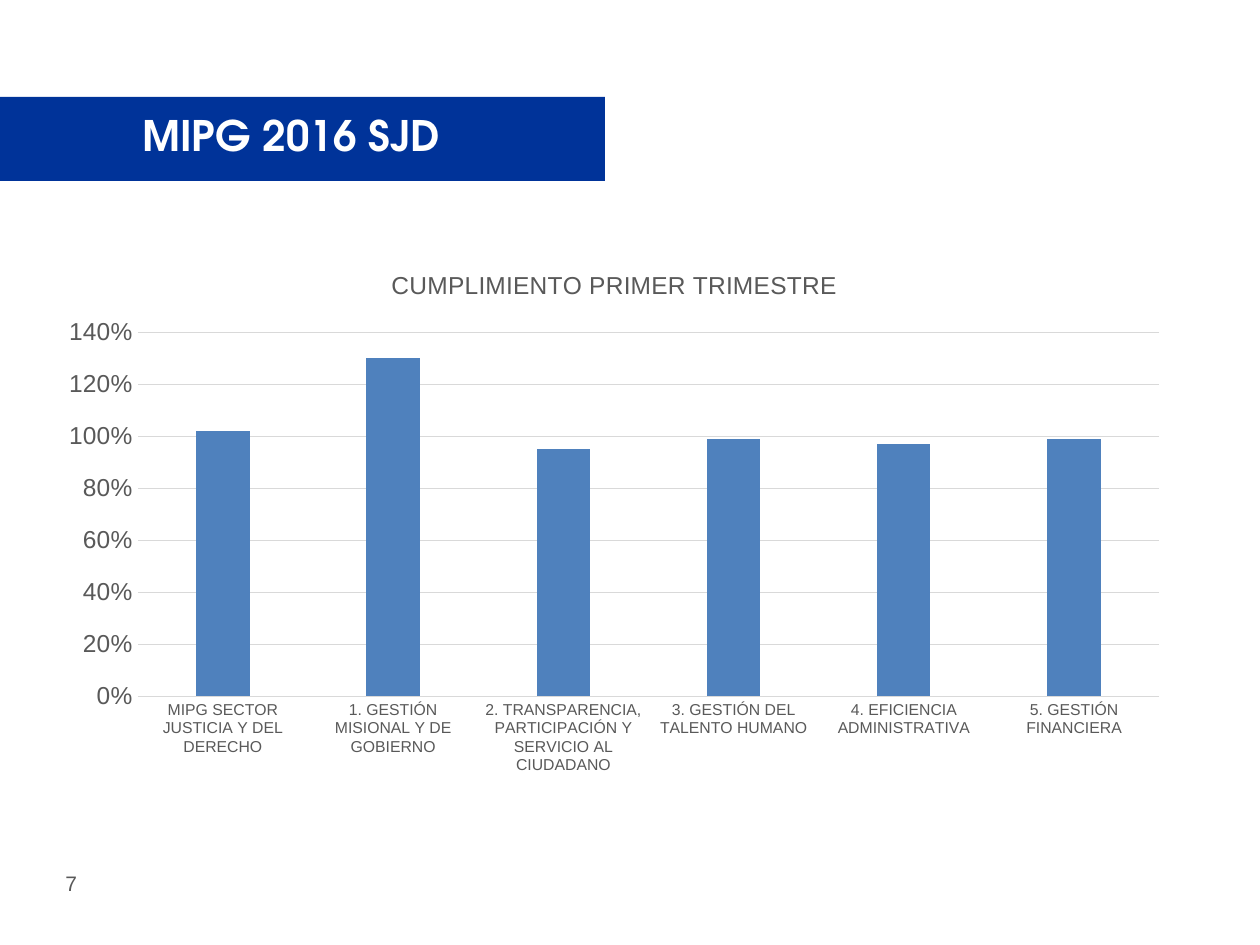
from dataclasses import dataclass

from lxml import etree
from pptx import Presentation
from pptx.chart.data import CategoryChartData
from pptx.dml.color import RGBColor
from pptx.enum.chart import XL_CHART_TYPE, XL_TICK_MARK
from pptx.enum.shapes import MSO_SHAPE
from pptx.enum.text import MSO_ANCHOR, PP_ALIGN
from pptx.oxml.ns import qn
from pptx.util import Emu, Pt

PX_PER_INCH = 126


@dataclass(frozen=True)
class Theme:
    band: RGBColor = RGBColor(0x00, 0x33, 0x99)
    heading: RGBColor = RGBColor(0xFF, 0xFF, 0xFF)
    ink: RGBColor = RGBColor(0x59, 0x59, 0x59)
    grid: RGBColor = RGBColor(0xD9, 0xD9, 0xD9)
    bar: RGBColor = RGBColor(0x4F, 0x81, 0xBD)
    heading_font: str = "TeX Gyre Adventor"
    body_font: str = "Arial"
    heading_size: int = 24
    chart_title_size: int = 14
    value_size: int = 14
    category_size: int = 9
    number_size: int = 12


THEME = Theme()

COMPLIANCE = {
    "MIPG SECTOR JUSTICIA Y DEL DERECHO": 1.02,
    "1. GESTIÓN MISIONAL Y DE GOBIERNO": 1.30,
    "2. TRANSPARENCIA, PARTICIPACIÓN Y SERVICIO AL CIUDADANO": 0.95,
    "3. GESTIÓN DEL TALENTO HUMANO": 0.99,
    "4. EFICIENCIA ADMINISTRATIVA": 0.97,
    "5. GESTIÓN FINANCIERA": 0.99,
}


def px(length):
    return Emu(round(length * 914400 / PX_PER_INCH))


def style_font(font, size, color, name=THEME.body_font, bold=False):
    font.size = Pt(size)
    font.color.rgb = color
    font.name = name
    font.bold = bold


def add_heading(slide, left, top, width, height):
    # Blue band
    band = slide.shapes.add_shape(
        MSO_SHAPE.RECTANGLE, px(left), px(top), px(width), px(height))
    band.shadow.inherit = False
    band.fill.solid()
    band.fill.fore_color.rgb = THEME.band
    band.line.fill.background()

    # Title, raised in front of the band
    title = slide.shapes.title
    title.left, title.top = px(left + 32), px(top + 8)
    title.width, title.height = px(518), px(60)
    band._element.addnext(title._element)
    frame = title.text_frame
    frame.word_wrap = True
    frame.vertical_anchor = MSO_ANCHOR.MIDDLE
    paragraph = frame.paragraphs[0]
    paragraph.alignment = PP_ALIGN.CENTER
    run = paragraph.add_run()
    run.text = "MIPG 2016 SJD"
    style_font(run.font, THEME.heading_size, THEME.heading,
               THEME.heading_font, bold=True)


def fix_plot_area(chart, **fractions):
    plot_area = chart._chartSpace.chart.plotArea
    layout = plot_area.find(qn("c:layout"))
    if layout is None:
        layout = etree.Element(qn("c:layout"))
        plot_area.insert(0, layout)
    manual = etree.SubElement(layout, qn("c:manualLayout"))
    settings = {"layoutTarget": "inner", "xMode": "edge", "yMode": "edge", **fractions}
    for tag, value in settings.items():
        etree.SubElement(manual, qn(f"c:{tag}")).set("val", str(value))


def add_compliance_chart(slide, left, top, width, height):
    data = CategoryChartData(number_format="0%")
    data.categories = list(COMPLIANCE)
    data.add_series("Series 1", list(COMPLIANCE.values()))
    chart = slide.shapes.add_chart(
        XL_CHART_TYPE.COLUMN_CLUSTERED,
        px(left), px(top), px(width), px(height), data).chart
    chart.has_legend = False
    chart.font.name = THEME.body_font
    chart.font.size = Pt(10)
    fix_plot_area(chart, x=0.08, y=0.16, w=0.9, h=0.68)

    # Chart title
    chart.has_title = True
    run = chart.chart_title.text_frame.paragraphs[0].add_run()
    run.text = "CUMPLIMIENTO PRIMER TRIMESTRE"
    style_font(run.font, THEME.chart_title_size, THEME.ink)
    chart.chart_title.include_in_layout = False

    # Columns
    plot = chart.plots[0]
    plot.vary_by_categories = False
    plot.gap_width = 219
    plot.overlap = -27
    columns = plot.series[0].format
    columns.fill.solid()
    columns.fill.fore_color.rgb = THEME.bar

    # Axes and gridlines
    categories, values = chart.category_axis, chart.value_axis
    for axis, size in ((categories, THEME.category_size), (values, THEME.value_size)):
        axis.major_tick_mark = axis.minor_tick_mark = XL_TICK_MARK.NONE
        style_font(axis.tick_labels.font, size, THEME.ink)
    values.minimum_scale, values.maximum_scale, values.major_unit = 0, 1.4, 0.2
    values.tick_labels.number_format = "0%"
    values.tick_labels.number_format_is_linked = False
    values.format.line.fill.background()
    values.has_major_gridlines = True
    for line in (categories.format.line, values.major_gridlines.format.line):
        line.color.rgb = THEME.grid
        line.width = Pt(0.75)


def add_page_number(slide, left, top, width, height):
    box = slide.shapes.add_textbox(px(left), px(top), px(width), px(height))
    box.text_frame.word_wrap = True
    run = box.text_frame.paragraphs[0].add_run()
    run.text = "7"
    style_font(run.font, THEME.number_size, THEME.ink)


def main():
    deck = Presentation()
    deck.slide_width, deck.slide_height = px(1260), px(945)
    slide = deck.slides.add_slide(deck.slide_layouts.get_by_name("Title Only"))
    add_page_number(slide, 53, 864, 95, 38)
    add_heading(slide, 0, 97, 605, 84)
    add_compliance_chart(slide, 47, 247, 1135, 535)
    deck.save("out.pptx")


if __name__ == "__main__":
    main()
